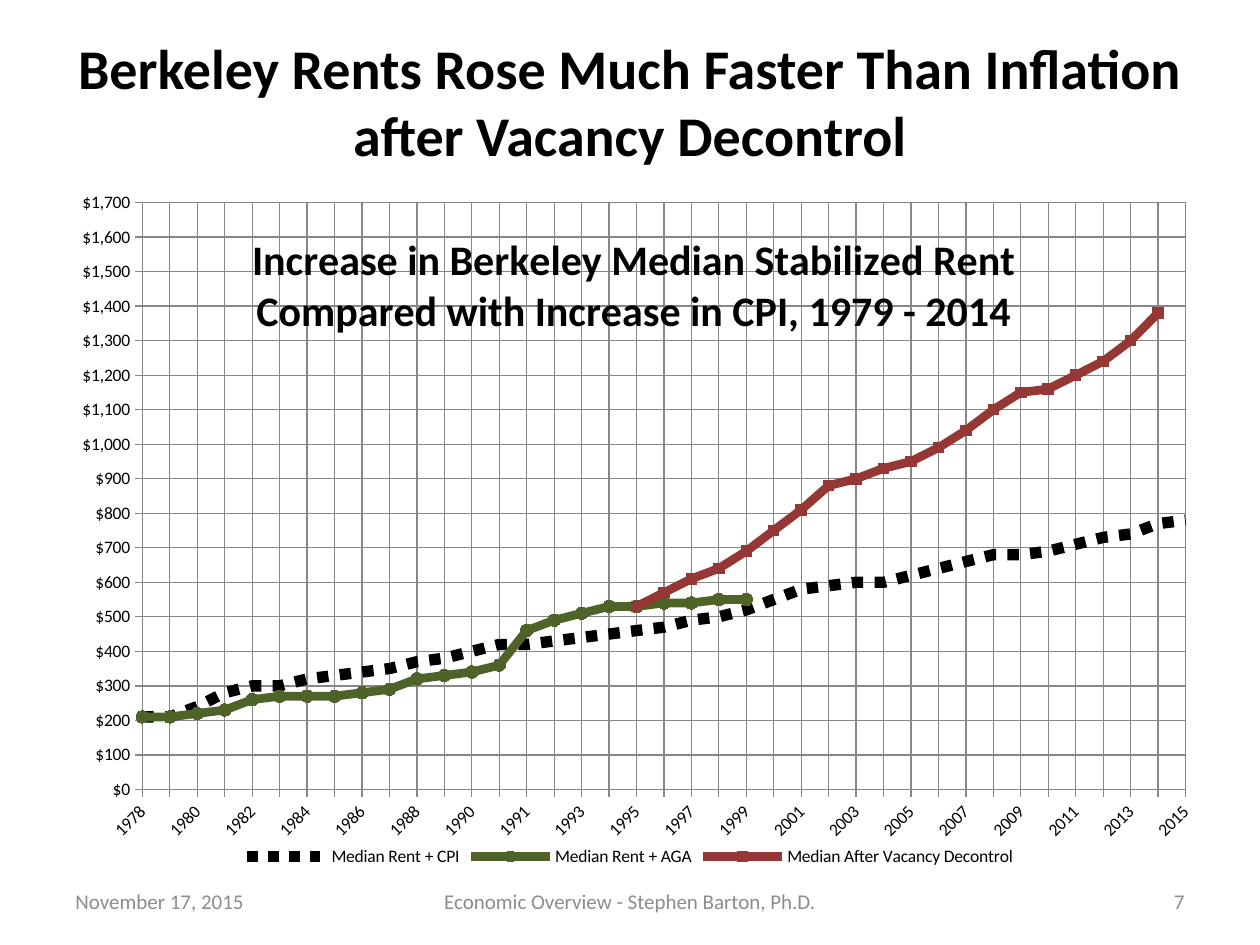
"""Build a slide that charts Berkeley rents against inflation."""
from dataclasses import dataclass
from typing import Optional

from lxml import etree
from pptx import Presentation
from pptx.chart.data import CategoryChartData
from pptx.dml.color import RGBColor
from pptx.enum.chart import (XL_CHART_TYPE, XL_LEGEND_POSITION,
                             XL_MARKER_STYLE, XL_TICK_MARK)
from pptx.enum.dml import MSO_LINE
from pptx.enum.text import MSO_ANCHOR, PP_ALIGN
from pptx.oxml.ns import qn
from pptx.util import Pt

LEFT, MID, RIGHT = PP_ALIGN.LEFT, PP_ALIGN.CENTER, PP_ALIGN.RIGHT
MIDDLE = MSO_ANCHOR.MIDDLE
NONE, ROUND, SQUARE = (XL_MARKER_STYLE.NONE, XL_MARKER_STYLE.CIRCLE,
                       XL_MARKER_STYLE.SQUARE)
OUT, CROSS = XL_TICK_MARK.OUTSIDE, XL_TICK_MARK.CROSS
DOTS = MSO_LINE.ROUND_DOT
LINE, BOTTOM = XL_CHART_TYPE.LINE_MARKERS, XL_LEGEND_POSITION.BOTTOM
FACE, BLACK, GREY, GRID = "Calibri", "000000", "8C8C8C", "878787"


@dataclass
class Trend:
    """One line of the chart."""
    name: str
    vals: list
    color: str
    width: float
    mark: XL_MARKER_STYLE = NONE
    size: int = 7
    dash: Optional[MSO_LINE] = None


@dataclass
class Note:
    """One text of the footer."""
    text: str
    left: float
    width: float
    align: PP_ALIGN


YEARS = [str(y) for y in (*range(1978, 1992), *range(1991, 2016))]
TRENDS = [
    Trend("Median Rent + CPI",
          [210, 210, 240, 280, 300, 300, 320, 330, 340, 350, 370, 380, 400,
           420, 420, 430, 440, 450, 460, 470, 490, 500, 520, 550, 580, 590,
           600, 600, 620, 640, 660, 680, 680, 690, 710, 730, 740, 770, 780],
          BLACK, 6.5, dash=DOTS),
    Trend("Median Rent + AGA",
          [210, 210, 220, 230, 260, 270, 270, 270, 280, 290, 320, 330, 340,
           360, 460, 490, 510, 530, 530, 540, 540, 550, 550],
          "4F6228", 5, ROUND),
    Trend("Median After Vacancy Decontrol",
          [None] * 18 + [530, 570, 610, 640, 690, 750, 810, 880, 900, 930,
                         950, 990, 1040, 1100, 1150, 1160, 1200, 1240, 1300,
                         1380],
          "953735", 5, SQUARE, 6),
]
NOTES = [
    Note("November 17, 2015", 36, 168, LEFT),
    Note("Economic Overview - Stephen Barton, Ph.D.", 246, 228, MID),
    Note("7", 516, 168, RIGHT),
]


def paint(item, color: str) -> None:
    """Give a fill a solid colour."""
    item.solid()
    item.fore_color.rgb = RGBColor.from_string(color)


def style(font, size: float, color: str = BLACK, bold: bool = False) -> None:
    """Set the face, size, weight and colour of a font."""
    font.name, font.size, font.bold = FACE, Pt(size), bold
    font.color.rgb = RGBColor.from_string(color)


def renew(part, tag: str, index: int):
    """Put a fresh child in a chart part in place of any old one."""
    for old in part.findall(qn(tag)):
        part.remove(old)
    child = etree.Element(qn(tag))
    part.insert(index, child)
    return child


def place(part, index: int, **spots) -> None:
    """Give a chart part a manual layout."""
    frame = renew(part, "c:layout", index)
    manual = etree.SubElement(frame, qn("c:manualLayout"))
    for key, val in spots.items():
        etree.SubElement(manual, qn(f"c:{key}")).set("val", str(val))


def add_note(slide, note: Note) -> None:
    """Write one footer text."""
    box = slide.shapes.add_textbox(Pt(note.left), Pt(500.5),
                                   Pt(note.width), Pt(28.75))
    frame = box.text_frame
    frame.word_wrap, frame.vertical_anchor = True, MIDDLE
    para = frame.paragraphs[0]
    para.text, para.alignment = note.text, note.align
    style(para.font, 12, GREY)


def draw_trend(line, trend: Trend) -> None:
    """Format one line of the chart."""
    line.smooth = False
    pen = line.format.line
    pen.width = Pt(trend.width)
    paint(pen.fill, trend.color)
    if trend.dash:
        pen.dash_style = trend.dash
    mark = line.marker
    mark.style = trend.mark
    if trend.mark != NONE:
        mark.size = trend.size
        paint(mark.format.fill, trend.color)
        paint(mark.format.line.fill, trend.color)


def set_axis(axis, tick: XL_TICK_MARK) -> None:
    """Format an axis with its grid."""
    axis.major_tick_mark = tick
    axis.has_major_gridlines = True
    for item in (axis, axis.major_gridlines):
        item.format.line.width = Pt(0.75)
        paint(item.format.line.fill, GRID)
    style(axis.tick_labels.font, 10)


def add_chart(slide) -> None:
    """Draw the chart of rents."""
    data = CategoryChartData()
    data.categories = YEARS
    for trend in TRENDS:
        data.add_series(trend.name, trend.vals)
    chart = slide.shapes.add_chart(LINE, Pt(36), Pt(108), Pt(648), Pt(390),
                                   data).chart
    style(chart.font, 10)
    plot = chart.plots[0]
    plot.vary_by_categories = False
    for line, trend in zip(plot.series, TRENDS):
        draw_trend(line, trend)

    years, rents = chart.category_axis, chart.value_axis
    set_axis(years, OUT)
    set_axis(rents, CROSS)
    rents.minimum_scale, rents.maximum_scale, rents.major_unit = 0, 1700, 100
    rents.tick_labels.number_format = '"$"#,##0'
    rents.tick_labels.number_format_is_linked = False
    base, side = years._element, rents._element
    base.find(f"{qn('c:txPr')}/{qn('a:bodyPr')}").set("rot", "-2700000")
    last = base.index(base.find(qn("c:noMultiLvlLbl")))
    renew(base, "c:tickLblSkip", last).set("val", "2")
    unit = side.index(side.find(qn("c:majorUnit")))
    renew(side, "c:crossBetween", unit).set("val", "midCat")

    chart.has_legend = True
    chart.legend.position = BOTTOM
    chart.legend.include_in_layout = False
    style(chart.legend.font, 10)

    chart.has_title = True
    title = chart.chart_title
    para = title.text_frame.paragraphs[0]
    para.text = ("Increase in Berkeley Median Stabilized Rent "
                 "Compared with Increase in CPI, 1979 - 2014")
    style(para.font, 24, bold=True)
    place(title._element, 1, xMode="edge", yMode="edge", x=0.16, y=0.05)
    renew(title._element, "c:overlay", 2).set("val", "1")
    place(chart._chartSpace.chart.plotArea, 0, layoutTarget="inner",
          xMode="edge", yMode="edge", x=0.07, y=0.02, w=0.92, h=0.86)


def main() -> None:
    """Build and save the slide."""
    deck = Presentation()
    deck.slide_width, deck.slide_height = Pt(720), Pt(540)
    slide = deck.slides.add_slide(deck.slide_layouts[5])
    title = slide.shapes.title
    title.left, title.top = Pt(36), Pt(12.5)
    title.width, title.height = Pt(648), Pt(90)
    title.text_frame.vertical_anchor = MIDDLE
    para = title.text_frame.paragraphs[0]
    para.text = ("Berkeley Rents Rose Much Faster Than Inflation "
                 "after Vacancy Decontrol")
    para.alignment = MID
    style(para.font, 32, bold=True)
    for note in NOTES:
        add_note(slide, note)
    add_chart(slide)
    deck.save("out.pptx")


if __name__ == "__main__":
    main()
